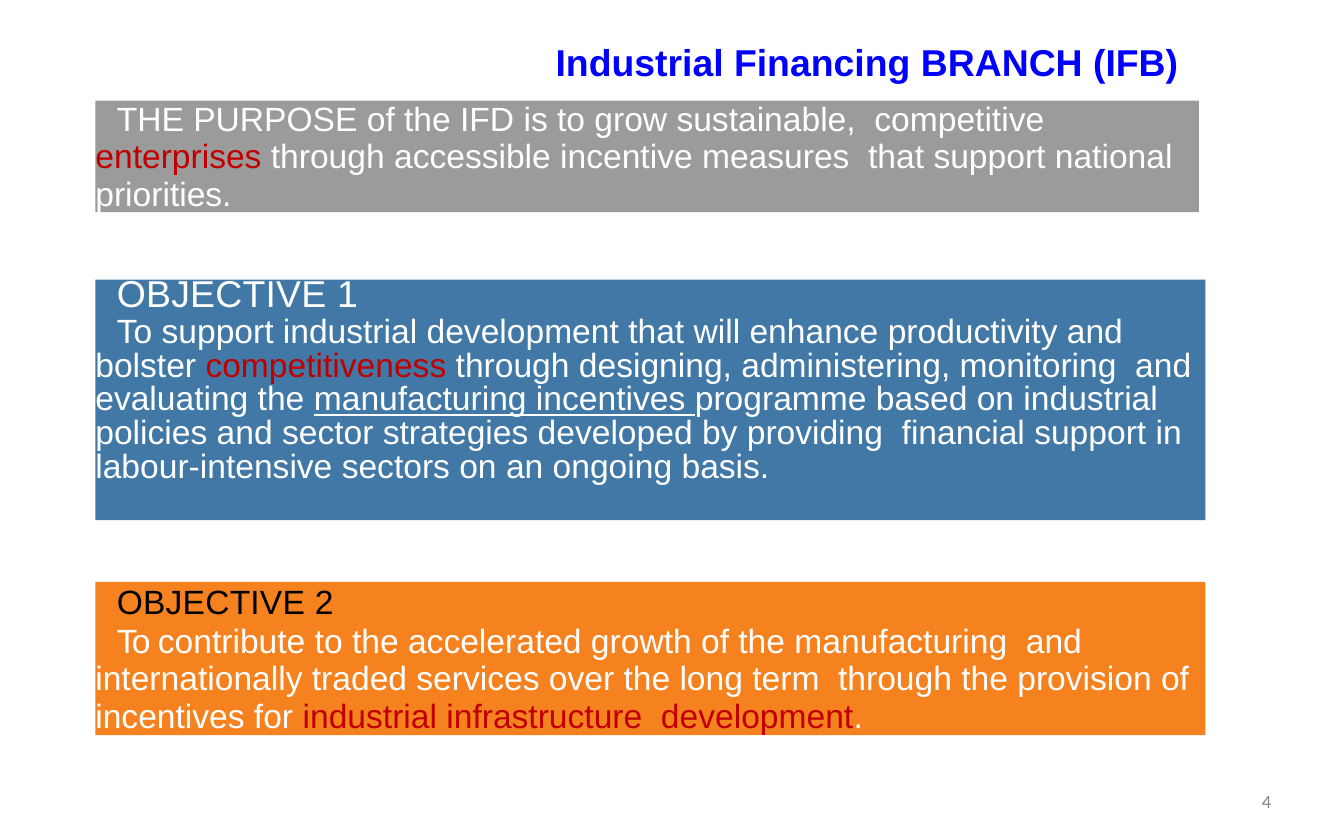
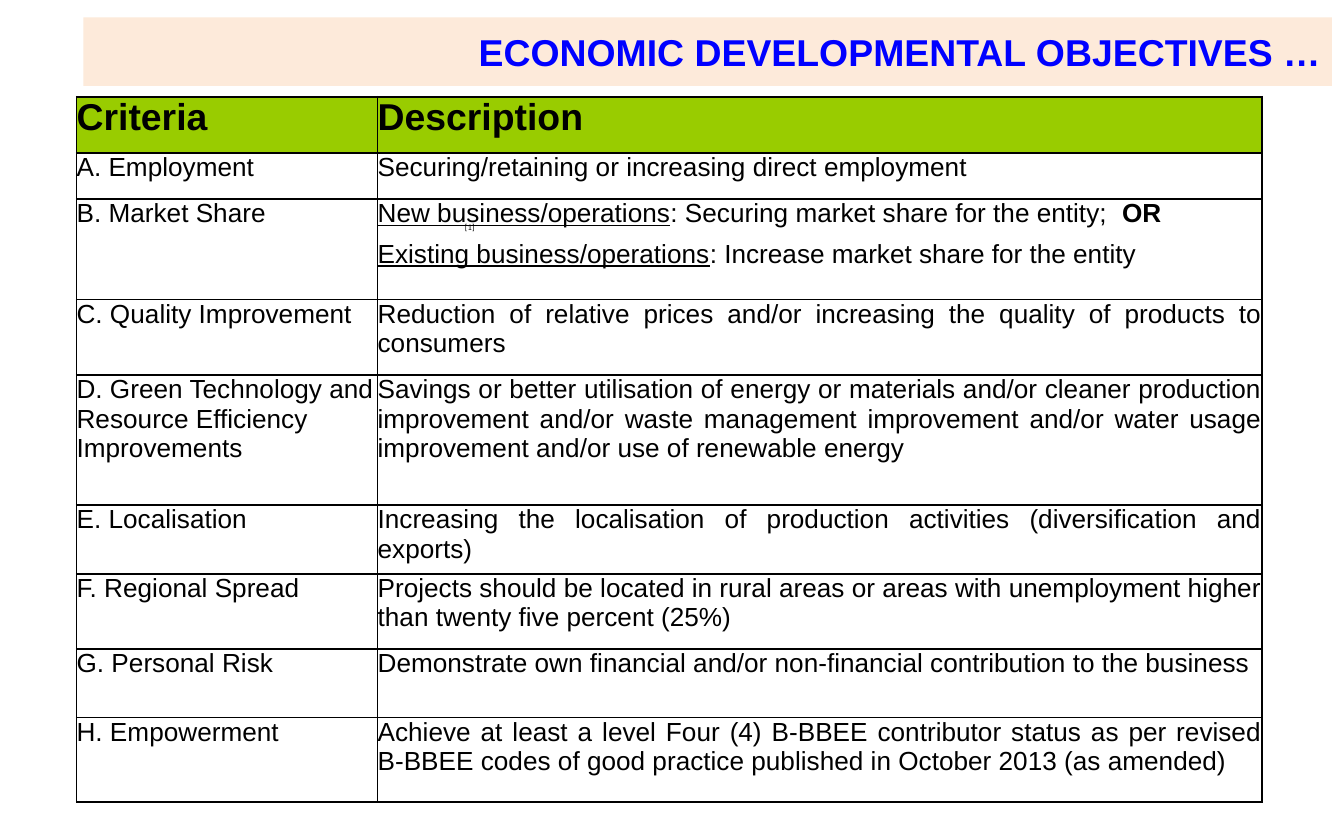
from dataclasses import dataclass
from lxml import etree
from pptx import Presentation
from pptx.dml.color import RGBColor
from pptx.enum.shapes import MSO_SHAPE
from pptx.enum.text import MSO_ANCHOR, MSO_AUTO_SIZE, PP_ALIGN
from pptx.oxml.ns import qn
from pptx.util import Inches, Pt

LEFT, RIGHT, JUSTIFY = PP_ALIGN.LEFT, PP_ALIGN.RIGHT, PP_ALIGN.JUSTIFY
TOP, MIDDLE = MSO_ANCHOR.TOP, MSO_ANCHOR.MIDDLE
FIXED, GROW = MSO_AUTO_SIZE.NONE, MSO_AUTO_SIZE.SHAPE_TO_FIT_TEXT
RECT = MSO_SHAPE.RECTANGLE
TITLE_ONLY = 5


@dataclass(frozen=True)
class Theme:
    font: str = "Arial"
    small_font: str = "Calibri"
    title: str = "0000FF"
    white: str = "FFFFFF"
    black: str = "000000"
    accent: str = "C00000"
    muted: str = "888888"
    grey: str = "9B9B9B"
    blue: str = "4178A6"
    orange: str = "F5821F"
    green: str = "99CC00"
    peach: str = "FDEADA"
    head: int = 20
    body: int = 18
    cell: int = 14
    number: int = 10
    note: int = 8


T = Theme()


def write(tf, paragraphs, base, inset=0, anchor=TOP, auto_size=FIXED, wrap=True):
    """Fill a text frame; each paragraph is (format dict, runs of (text, font dict))."""
    tf.word_wrap, tf.vertical_anchor, tf.auto_size = wrap, anchor, auto_size
    for side in ("left", "right", "top", "bottom"):
        setattr(tf, f"margin_{side}", Inches(inset))
    for i, (layout, runs) in enumerate(paragraphs):
        p = tf.paragraphs[0] if i == 0 else tf.add_paragraph()
        layout = dict(layout)
        indent = layout.pop("indent", None)
        for name, value in layout.items():
            setattr(p, name, value)
        if indent:
            p._p.get_or_add_pPr().set("marL", "0")
            p._p.get_or_add_pPr().set("indent", str(Inches(indent)))
        for text, extra in runs:
            r = p.add_run()
            r.text = text
            font = {"name": T.font, **base, **extra}
            r.font.color.rgb = RGBColor.from_string(font.pop("color"))
            for attr in ("spc", "baseline"):
                if attr in font:
                    r._r.get_or_add_rPr().set(attr, str(font.pop(attr)))
            for name, value in font.items():
                setattr(r.font, name, value)


def add_box(s, at, fill):
    sp = s.shapes.add_shape(RECT, *map(Inches, at))
    sp.shadow.inherit = False
    sp.fill.solid()
    sp.fill.fore_color.rgb = RGBColor.from_string(fill)
    sp.line.fill.background()
    return sp


prs = Presentation()
prs.slide_width, prs.slide_height = Inches(10), Inches(6.25)

# Slides and their titles
titles = [
    ("Industrial Financing BRANCH (IFB) ", (1.15, 0.27, 7.7, 0.38), 0),
    ("ECONOMIC DEVELOPMENTAL OBJECTIVES …", (0.67, 0.13, 9.2, 0.51), 0.04),
]
for text, at, inset in titles:
    s = prs.slides.add_slide(prs.slide_layouts[TITLE_ONLY])
    title = s.shapes.title
    title.left, title.top, title.width, title.height = map(Inches, at)
    write(title.text_frame, [({"alignment": RIGHT}, [(text, {})])],
          {"size": Pt(T.head), "color": T.title, "bold": True}, inset, MIDDLE)
purpose_slide, criteria_slide = prs.slides

# Purpose and objective panels
red, white = {"color": T.accent}, {"color": T.white}
wide, tight = {"spc": 10}, {"spc": -10}
panels = [
    (0.75, 8.21, 0.83, T.grey, [
        (20, 9, [("THE PURPOSE of the IFD is to grow sustainable,  competitive ", {}),
                 ("enterprises", red),
                 (" through accessible incentive measures  that support national priorities.", {})]),
    ]),
    (2.08, 8.26, 1.79, T.blue, [
        (19, 6, [("OBJECTIVE ", {"size": Pt(T.head), **wide}),
                 ("1", {"size": Pt(T.head), **tight})]),
        (18, 1, [("To support industrial development that will enhance productivity and  bolster ", {}),
                 ("competitiveness", red),
                 (" through designing, administering, monitoring  and evaluating the ", {}),
                 ("manufacturing incentives ", {"underline": True}),
                 ("programme based on industrial policies and sector strategies developed by "
                  "providing  financial support in labour-intensive sectors on an ongoing basis.", {})]),
    ]),
    (4.33, 8.26, 1.14, T.orange, [
        (21, 6, [("OBJECTIVE ", {"color": T.black, **wide}),
                 ("2", {"color": T.black, **tight})]),
        (20, 1, [("To ", {"spc": -100}),
                 ("contribute to the accelerated growth of the manufacturing  and internationally "
                  "traded services over the long term  through the provision of incentives for ", {}),
                 ("industrial infrastructure  development", red),
                 (".", {})]),
    ]),
]
for top, width, height, fill, texts in panels:
    sp = add_box(purpose_slide, (0.71, top, width, height), fill)
    paragraphs = [({"alignment": LEFT, "indent": 0.16, "line_spacing": Pt(line),
                    "space_before": Pt(before)}, runs) for line, before, runs in texts]
    write(sp.text_frame, paragraphs, {"size": Pt(T.body), **white}, auto_size=GROW)

# Page number
number = purpose_slide.shapes.add_textbox(*map(Inches, (9.33, 5.84, 0.17, 0.24)))
write(number.text_frame, [({"alignment": RIGHT}, [("4", {})])],
      {"name": T.small_font, "size": Pt(T.number), "color": T.muted},
      0.04, MIDDLE, GROW, wrap=False)

# Band behind the criteria title
band = add_box(criteria_slide, (0.62, 0.13, 9.29, 0.51), T.peach)
criteria_slide.shapes.title._element.addprevious(band._element)

# Criteria table: row height, criterion, description paragraphs
under = {"underline": True}
criteria = [
    (0.42, "Criteria", [[("Description", {})]]),
    (0.34, "A. Employment", [[("Securing/retaining or increasing direct employment", {})]]),
    (0.75, "B. Market Share", [
        [("New business/operations", under),
         (": Securing market share for the entity;  ", {}), ("OR", {"bold": True})],
        [("Existing business/operations", under),
         (": Increase market share for the entity", {})]]),
    (0.56, "C. Quality Improvement", [[(
        "Reduction of relative prices and/or increasing the quality of products to consumers", {})]]),
    (0.97, "D. Green Technology and Resource Efficiency Improvements", [[(
        "Savings or better utilisation of energy or materials and/or cleaner production "
        "improvement and/or waste management improvement and/or water usage improvement "
        "and/or use of renewable energy", {})]]),
    (0.51, "E. Localisation", [[(
        "Increasing the localisation of production activities (diversification and exports) ", {})]]),
    (0.56, "F. Regional Spread", [[(
        "Projects should be located in rural areas or areas with unemployment higher than "
        "twenty five percent (25%)", {})]]),
    (0.51, "G. Personal Risk", [[(
        "Demonstrate own financial and/or non-financial contribution to the business ", {})]]),
    (0.63, "H. Empowerment", [[(
        "Achieve at least a level Four (4) B-BBEE contributor status as per revised B-BBEE "
        "codes of good practice published in October 2013 (as amended)", {})]]),
]
frame = criteria_slide.shapes.add_table(
    len(criteria), 2, *map(Inches, (0.57, 0.72, 8.82, 5.27)))
table = frame.table
table.first_row = table.horz_banding = False
for column, width in zip(table.columns, (2.24, 6.58)):
    column.width = Inches(width)

for i, (height, criterion, description) in enumerate(criteria):
    table.rows[i].height = Inches(height)
    header = i == 0
    base = {"size": Pt(T.head if header else T.cell), "color": T.black, "bold": header}
    for j, texts in enumerate(([[(criterion, {})]], description)):
        cell = table.cell(i, j)
        layout = {"alignment": JUSTIFY if header or j else LEFT, "space_before": Pt(6)}
        write(cell.text_frame, [(layout, runs) for runs in texts], base)
        cell.margin_left = cell.margin_right = cell.margin_top = cell.margin_bottom = 0
        cell.vertical_anchor = TOP
        tcPr = cell._tc.get_or_add_tcPr()
        for edge in ("a:lnL", "a:lnR", "a:lnT", "a:lnB"):
            ln = etree.SubElement(tcPr, qn(edge), w=str(Pt(1)))
            line_fill = etree.SubElement(ln, qn("a:solidFill"))
            etree.SubElement(line_fill, qn("a:srgbClr"), val=T.black)
        cell.fill.solid()
        cell.fill.fore_color.rgb = RGBColor.from_string(T.green if header else T.white)
        tcPr.append(tcPr.find(qn("a:solidFill")))

# Footnote mark
mark = criteria_slide.shapes.add_textbox(*map(Inches, (3.41, 1.6, 0.2, 0.21)))
write(mark.text_frame, [({}, [("[1]", {"baseline": 30000})])],
      {"name": T.small_font, "size": Pt(T.note), "color": T.black},
      0.05, MIDDLE, GROW, wrap=False)

prs.save("out.pptx")
